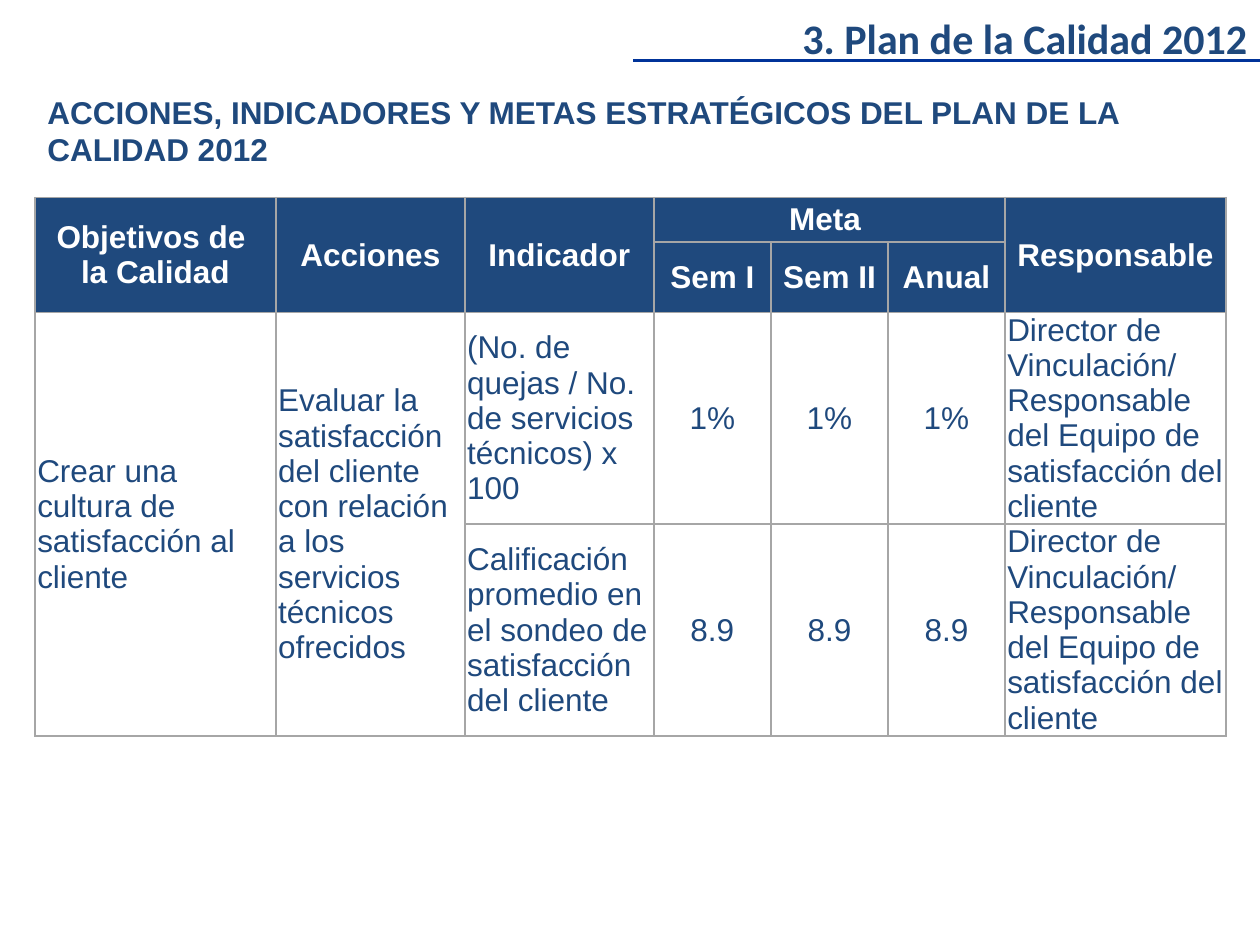
from lxml.etree import SubElement
from pptx import Presentation
from pptx.dml.color import RGBColor
from pptx.enum.shapes import MSO_CONNECTOR
from pptx.enum.text import MSO_ANCHOR, PP_ALIGN
from pptx.oxml.ns import qn
from pptx.util import Pt

NAVY = RGBColor(0x1F, 0x49, 0x7D)
BLUE = RGBColor(0x00, 0x33, 0x99)
GRAY = RGBColor(0xA6, 0xA6, 0xA6)
WHITE = RGBColor(0xFF, 0xFF, 0xFF)

# Content: None marks a cell covered by a merge
TITLE = "3. Plan de la Calidad 2012"
HEAD = "ACCIONES, INDICADORES Y METAS ESTRATÉGICOS DEL PLAN DE LA CALIDAD 2012"
OWNER = "Director de Vinculación/ Responsable del Equipo de satisfacción del cliente"
ROWS = [
    ["Objetivos de \nla Calidad", "Acciones", "Indicador", "Meta ", None, None, "Responsable"],
    [None, None, None, "Sem I", "Sem II", "Anual", None],
    ["Crear una cultura de satisfacción al cliente",
     "Evaluar la satisfacción del cliente con relación a los servicios técnicos ofrecidos",
     "(No. de quejas / No. de servicios técnicos) x 100", "1%", "1%", "1%", OWNER],
    [None, None, "Calificación promedio en el sondeo de satisfacción del cliente",
     "8.9", "8.9", "8.9", OWNER],
]
MERGES = [(0, 0, 1, 0), (0, 1, 1, 1), (0, 2, 1, 2), (0, 3, 0, 5), (0, 6, 1, 6),
          (2, 0, 3, 0), (2, 1, 3, 1)]
WIDTHS = [137.6, 108, 108, 66.9, 66.9, 66.9, 126.2]
HEIGHTS = [25.2, 40.4, 121, 121]
HEADS = 2
GOALS = range(3, 6)
LEFT, WIDE = 20, 680.5


def write(frame, text, size=18, font="Arial", color=NAVY, bold=False, align=PP_ALIGN.LEFT):
    frame.word_wrap = True
    for i, line in enumerate(text.split("\n")):
        para = frame.add_paragraph() if i else frame.paragraphs[0]
        para.alignment = align
        run = para.add_run()
        run.text = line
        run.font.size = Pt(size)
        run.font.name = font
        run.font.bold = bold
        run.font.color.rgb = color


def border(cell):
    props = cell._tc.get_or_add_tcPr()
    for i, side in enumerate(("lnL", "lnR", "lnT", "lnB")):
        line = props.makeelement(qn(f"a:{side}"), {"w": str(Pt(1))})
        fill = SubElement(line, qn("a:solidFill"))
        SubElement(fill, qn("a:srgbClr"), val=str(GRAY))
        props.insert(i, line)


deck = Presentation()
deck.slide_width, deck.slide_height = Pt(720), Pt(540)
slide = deck.slides.add_slide(deck.slide_layouts[6])
shapes = slide.shapes

# Rule under the title
rule = shapes.add_connector(MSO_CONNECTOR.STRAIGHT, Pt(720), Pt(34.5), Pt(361.5), Pt(34.5))
rule.line.color.rgb = BLUE
rule.line.width = Pt(1.5)
SubElement(rule._element.spPr, qn("a:effectLst"))

# Plan table
table = shapes.add_table(len(ROWS), len(WIDTHS), Pt(LEFT), Pt(113),
                         Pt(WIDE), Pt(sum(HEIGHTS))).table
for col, width in zip(table.columns, WIDTHS):
    col.width = Pt(width)
for row, height in zip(table.rows, HEIGHTS):
    row.height = Pt(height)
for top, left, low, right in MERGES:
    table.cell(top, left).merge(table.cell(low, right))

for r, row in enumerate(ROWS):
    head = r < HEADS
    for c, text in enumerate(row):
        cell = table.cell(r, c)
        cell.fill.solid()
        cell.fill.fore_color.rgb = NAVY if head else WHITE
        cell.vertical_anchor = MSO_ANCHOR.MIDDLE
        cell.margin_left = cell.margin_right = Pt(1.3)
        cell.margin_top = cell.margin_bottom = 0
        border(cell)
        if text:
            write(cell.text_frame, text, color=WHITE if head else NAVY, bold=head,
                  align=PP_ALIGN.CENTER if head or c in GOALS else PP_ALIGN.LEFT)

# Heading and title
box = shapes.add_textbox(Pt(LEFT), Pt(49), Pt(WIDE), Pt(51)).text_frame
box.vertical_anchor = MSO_ANCHOR.MIDDLE
write(box, HEAD, bold=True)
box = shapes.add_textbox(Pt(360), Pt(3.6), Pt(360), Pt(36)).text_frame
write(box, TITLE, size=24, font="Calibri", bold=True, align=PP_ALIGN.RIGHT)

deck.save("out.pptx")
